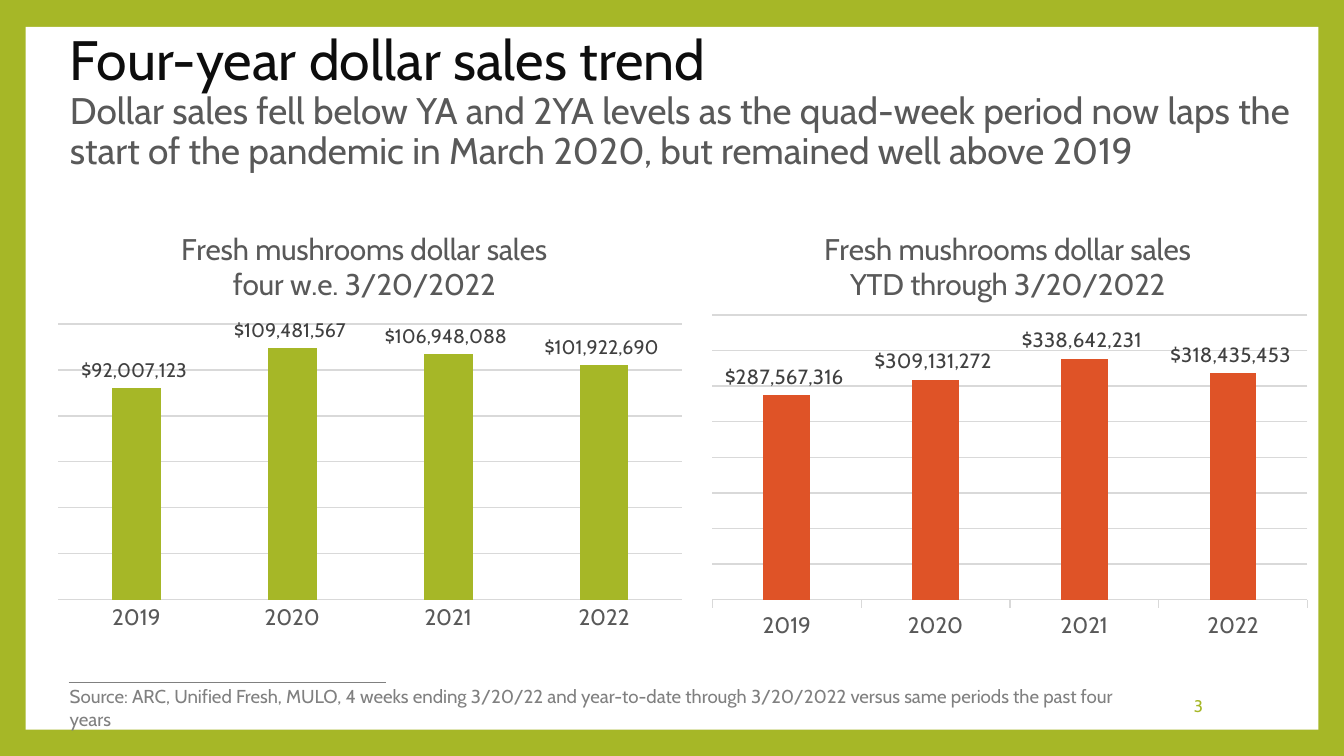
from lxml import etree
from pptx import Presentation
from pptx.chart.data import CategoryChartData
from pptx.dml.color import RGBColor
from pptx.enum import chart as charts, shapes, text
from pptx.oxml import parse_xml
from pptx.oxml.ns import nsdecls, qn
from pptx.util import Inches, Pt

COLORS = {
    "green": "A6B727", "orange": "DF5327", "white": "FFFFFF",
    "black": "0D0D0D", "dark": "404040", "body": "595959",
    "muted": "808080", "grid": "D9D9D9",
}
DOLLARS = '"$"#,##0_);[Red]\\("$"#,##0\\)'
YEARS = ["2019", "2020", "2021", "2022"]


def manual_layout(x, y, w=None, h=None):
    """Return a chart layout; with a size it describes the inner plot area."""
    values = [("xMode", "edge"), ("yMode", "edge"), ("x", x), ("y", y)]
    if w is not None:
        values = [("layoutTarget", "inner")] + values + [("w", w), ("h", h)]
    items = "".join(f'<c:{tag} val="{value}"/>' for tag, value in values)
    return parse_xml(f'<c:layout {nsdecls("c")}><c:manualLayout>{items}'
                     '</c:manualLayout></c:layout>')


class Deck:
    font_name = "Cabin"

    def __init__(self, width, height):
        self.prs = Presentation()
        self.prs.slide_width = Inches(width)
        self.prs.slide_height = Inches(height)
        self.slide = None

    def color(self, name):
        return RGBColor.from_string(COLORS[name])

    def style(self, font, size, color):
        font.name = self.font_name
        font.size = Pt(size)
        font.bold = False
        font.color.rgb = self.color(color)

    def line(self, line_format, color, width):
        line_format.color.rgb = self.color(color)
        line_format.width = Pt(width)

    def new_slide(self, background):
        self.slide = self.prs.slides.add_slide(self.prs.slide_layouts[5])
        fill = self.slide.background.fill
        fill.solid()
        fill.fore_color.rgb = self.color(background)

    def panel(self, box, color):
        panel = self.slide.shapes.add_shape(
            shapes.MSO_SHAPE.RECTANGLE, *map(Inches, box))
        panel.shadow.inherit = False
        panel.fill.solid()
        panel.fill.fore_color.rgb = self.color(color)
        panel.line.fill.background()

    def rule(self, x1, x2, y, color, width):
        rule = self.slide.shapes.add_connector(
            shapes.MSO_CONNECTOR.STRAIGHT, *map(Inches, (x1, y, x2, y)))
        self.line(rule.line, color, width)
        etree.SubElement(rule._element.spPr, qn("a:effectLst"))

    def title(self, box, headline, subhead):
        title = self.slide.shapes.title
        self.slide.shapes._spTree.append(title._element)  # above the panel
        title.left, title.top, title.width, title.height = map(Inches, box)
        frame = title.text_frame
        frame.text = f"{headline}\v{subhead}"
        frame.auto_size = text.MSO_AUTO_SIZE.NONE
        frame.vertical_anchor = text.MSO_ANCHOR.MIDDLE
        paragraph = frame.paragraphs[0]
        paragraph.alignment = text.PP_ALIGN.LEFT
        paragraph.line_spacing = 0.9
        self.style(paragraph.runs[0].font, 29.7, "black")
        self.style(paragraph.runs[1].font, 19.8, "body")

    def label(self, box, words, size, color, align=text.PP_ALIGN.LEFT,
              anchor=text.MSO_ANCHOR.TOP):
        frame = self.slide.shapes.add_textbox(*map(Inches, box)).text_frame
        frame.word_wrap = True
        frame.vertical_anchor = anchor
        frame.text = words
        frame.paragraphs[0].alignment = align
        self.style(frame.paragraphs[0].runs[0].font, size, color)

    def column_chart(self, box, heading, heading_x, sales, color, top, step,
                     plot, label_size, tick):
        data = CategoryChartData(number_format=DOLLARS)
        data.categories = YEARS
        data.add_series("Series 1", sales)
        chart = self.slide.shapes.add_chart(
            charts.XL_CHART_TYPE.COLUMN_CLUSTERED, *map(Inches, box),
            data).chart
        self.style(chart.font, 10, "dark")
        chart.has_legend = False

        chart.has_title = True
        title = chart.chart_title
        title.text_frame.text = heading
        for paragraph in title.text_frame.paragraphs:
            self.style(paragraph.runs[0].font, 16, "body")
        title.include_in_layout = False
        for old in title._element.findall(qn("c:layout")):
            title._element.remove(old)
        title._element.find(qn("c:tx")).addnext(
            manual_layout(heading_x, 0.04))

        plot_area = chart._chartSpace.chart.plotArea
        for old in plot_area.findall(qn("c:layout")):
            plot_area.remove(old)
        plot_area.insert(0, manual_layout(*plot))

        years = chart.category_axis
        years.major_tick_mark = tick
        self.style(years.tick_labels.font, 12, "body")
        self.line(years.format.line, "grid", 0.75)

        dollars = chart.value_axis
        dollars.visible = False
        dollars.minimum_scale, dollars.maximum_scale = 0, top
        dollars.major_unit = step
        dollars.tick_labels.number_format = DOLLARS
        dollars.tick_labels.number_format_is_linked = False
        dollars.has_major_gridlines = True
        self.line(dollars.major_gridlines.format.line, "grid", 0.75)

        columns = chart.plots[0]
        columns.vary_by_categories = False
        columns.gap_width, columns.overlap = 219, -27
        fill = columns.series[0].format.fill
        fill.solid()
        fill.fore_color.rgb = self.color(color)
        columns.has_data_labels = True
        labels = columns.data_labels
        labels.show_value = True
        labels.position = charts.XL_LABEL_POSITION.OUTSIDE_END
        labels.number_format = DOLLARS
        labels.number_format_is_linked = False
        self.style(labels.font, label_size, "dark")


def main():
    deck = Deck(10, 10 * 9 / 16)
    deck.new_slide("green")
    deck.panel((0.19, 0.2, 9.62, 5.23), "white")
    deck.rule(0.51, 2.87, 5.08, "muted", 0.79)
    deck.title(
        (0.42, 0.37, 9.45, 0.79), "Four-year dollar sales trend",
        "Dollar sales fell below YA and 2YA levels as the quad-week period "
        "now laps the start of the pandemic in March 2020, but remained well "
        "above 2019")
    deck.label((7.65, 5.1, 1.4, 0.3), "3", 9, "green",
               text.PP_ALIGN.RIGHT, text.MSO_ANCHOR.MIDDLE)
    deck.label(
        (0.42, 5.05, 8.12, 0.27),
        "Source: ARC, Unified Fresh, MULO, 4 weeks ending 3/20/22 and "
        "year-to-date through 3/20/2022 versus same periods the past four "
        "years", 10, "muted")
    deck.column_chart(
        (0.43, 1.55, 4.65, 3.31),
        "Fresh mushrooms dollar sales\nfour w.e. 3/20/2022", 0.19,
        [92007123, 109481567, 106948088, 101922690], "green",
        120_000_000, 20_000_000, (0, 0.26, 1, 0.62), 10.5,
        charts.XL_TICK_MARK.NONE)
    deck.column_chart(
        (5.16, 1.55, 4.71, 3.31),
        "Fresh mushrooms dollar sales\nYTD through 3/20/2022", 0.2,
        [287567316, 309131272, 338642231, 318435453], "orange",
        400_000_000, 50_000_000, (0.03, 0.24, 0.94, 0.64), 11,
        charts.XL_TICK_MARK.OUTSIDE)
    deck.prs.save("out.pptx")


if __name__ == "__main__":
    main()
